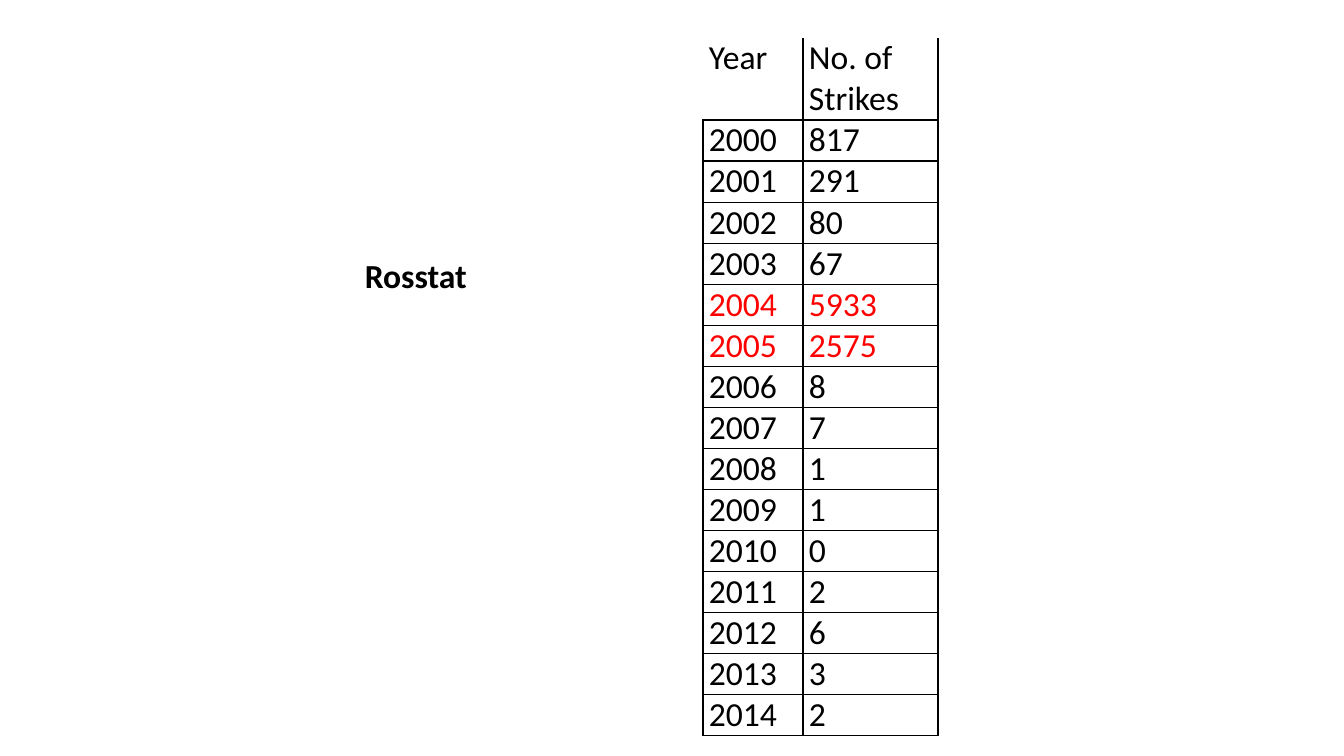
import pptx
import pptx.dml.color
import pptx.oxml
import pptx.oxml.ns
import pptx.util

PX = 914400 / 100.8
BLACK, WHITE, RED = "000000", "FFFFFF", "FF0000"
FIRST_YEAR = 2000
STRIKES = [817, 291, 80, 67, 5933, 2575, 8, 7, 1, 1, 0, 2, 6, 3, 2]
PEAK_YEARS = (2004, 2005)


def px(length):
    return pptx.util.Emu(round(length * PX))


def rgb(color):
    return pptx.dml.color.RGBColor.from_string(color)


class SlideBuilder:
    font_name = "Calibri"
    font_size = 24

    def __init__(self, slide):
        self.slide = slide

    def add_run(self, paragraph, text, color=BLACK, bold=False):
        run = paragraph.add_run()
        run.text = text
        run.font.name = self.font_name
        run.font.size = pptx.util.Pt(self.font_size)
        run.font.bold = bold
        run.font.color.rgb = rgb(color)

    def add_label(self, text, left, top, width, height):
        box = self.slide.shapes.add_textbox(px(left), px(top), px(width), px(height))
        box.text_frame.word_wrap = True
        self.add_run(box.text_frame.paragraphs[0], text, bold=True)

    def add_border(self, cell, side, visible):
        paint = "<a:noFill/>"
        if visible:
            paint = f'<a:solidFill><a:srgbClr val="{BLACK}"/></a:solidFill>'
        namespace = pptx.oxml.ns.nsdecls("a")
        line = pptx.oxml.parse_xml(f'<a:ln{side} {namespace} w="12700">{paint}</a:ln{side}>')
        cell._tc.get_or_add_tcPr().append(line)

    def fill_cell(self, cell, text, color, open_sides):
        cell.margin_left = cell.margin_right = px(6)
        cell.margin_top = cell.margin_bottom = 0
        for side in "LRTB":
            self.add_border(cell, side, side not in open_sides)
        cell.fill.solid()
        cell.fill.fore_color.rgb = rgb(WHITE)
        self.add_run(cell.text_frame.paragraphs[0], text, color)

    def add_table(self, rows, left, top, column_widths, row_height, red_rows):
        """Draw a ruled table whose header is open at its top and left."""
        frame = self.slide.shapes.add_table(
            len(rows), len(column_widths), px(left), px(top),
            px(sum(column_widths)), px(row_height * len(rows)))
        table = frame.table
        table.first_row = table.horz_banding = False
        for column, width in zip(table.columns, column_widths):
            column.width = px(width)
        for row_index, values in enumerate(rows):
            table.rows[row_index].height = px(row_height)
            color = RED if row_index in red_rows else BLACK
            for column_index, value in enumerate(values):
                open_sides = ""
                if row_index == 0:
                    open_sides = "T" if column_index else "LT"
                self.fill_cell(table.cell(row_index, column_index), str(value),
                               color, open_sides)


def main():
    presentation = pptx.Presentation()
    presentation.slide_width, presentation.slide_height = px(1344), px(756)
    slide = presentation.slides.add_slide(presentation.slide_layouts[6])
    builder = SlideBuilder(slide)
    rows = [("Year", "No. of Strikes"), *enumerate(STRIKES, FIRST_YEAR)]
    red_rows = [year - FIRST_YEAR + 1 for year in PEAK_YEARS]
    builder.add_table(rows, 703, 38, (100, 135), 36, red_rows)
    builder.add_label("Rosstat", 355, 250, 247, 50)
    presentation.save("out.pptx")


if __name__ == "__main__":
    main()
